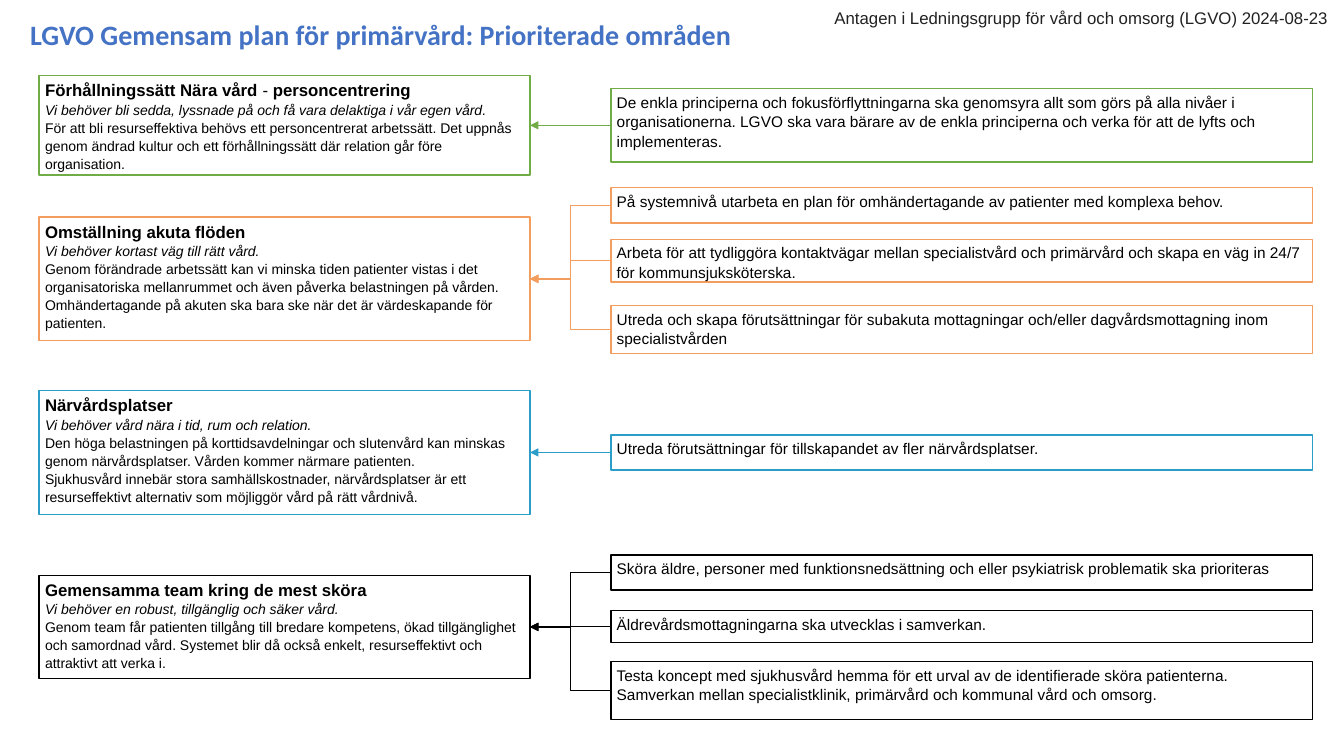
from lxml.etree import SubElement
from pptx import Presentation
from pptx.dml.color import RGBColor
from pptx.enum.shapes import MSO_CONNECTOR, MSO_SHAPE
from pptx.enum.text import MSO_ANCHOR, PP_ALIGN
from pptx.oxml.ns import qn
from pptx.util import Pt

HUES = {
    "title": "4472C4", "note": "212121", "text": "000000", "back": "FFFFFF",
    "green": "70AD47", "orange": "F39D5F", "blue": "2A9EC8", "black": "000000",
}
CARD_X, CARD_W = 28, 350.6
ITEM_X, ITEM_W = 436.3, 501.2

deck = Presentation()
deck.slide_width, deck.slide_height = Pt(960), Pt(540)
slide = deck.slides.add_slide(deck.slide_layouts[6])


def write(frame, lines, size=11, font="Arial", hue="text", space=1.07,
          inset=(7.2, 3.6), anchor=MSO_ANCHOR.TOP):
    frame.word_wrap = True
    frame.vertical_anchor = anchor
    frame.margin_left = frame.margin_right = Pt(inset[0])
    frame.margin_top = frame.margin_bottom = Pt(inset[1])
    for n, runs in enumerate(lines):
        para = frame.paragraphs[0] if n == 0 else frame.add_paragraph()
        para.alignment = PP_ALIGN.LEFT
        para.line_spacing = space
        for text, style in runs:
            run = para.add_run()
            run.text = text
            run.font.name = font
            run.font.size = Pt(12 if "h" in style else size)
            run.font.bold = "b" in style
            run.font.italic = "i" in style
            run.font.color.rgb = RGBColor.from_string(HUES[hue])


def frame_box(x, y, wide, high, hue, lines, size):
    box = slide.shapes.add_shape(
        MSO_SHAPE.RECTANGLE, Pt(x), Pt(y), Pt(wide), Pt(high))
    box.shadow.inherit = False
    box.fill.solid()
    box.fill.fore_color.rgb = RGBColor.from_string(HUES["back"])
    box.line.color.rgb = RGBColor.from_string(HUES[hue])
    box.line.width = Pt(1)
    write(box.text_frame, lines, size=size, inset=(4.2, 2.1))
    return box


title = slide.shapes.add_textbox(Pt(14.4), Pt(7.9), Pt(648.7), Pt(36.7))
write(title.text_frame,
      [[("LGVO Gemensam plan för primärvård: Prioriterade områden", "b")]],
      size=20, font="Calibri", hue="title", space=0.9, anchor=MSO_ANCHOR.MIDDLE)

note = slide.shapes.add_textbox(Pt(589), Pt(2.2), Pt(371), Pt(21.6))
write(note.text_frame,
      [[("Antagen i Ledningsgrupp för vård och omsorg (LGVO) 2024-08-23", "")]],
      size=12, hue="note", space=1.0)

AREAS = [
    ("green", 1, MSO_CONNECTOR.ELBOW, 54, 71.1,
     [[("Förhållningssätt Nära vård", "hb"), (" - ", "h"), ("personcentrering", "hb")],
      [("Vi behöver bli sedda, lyssnade på och få vara delaktiga i vår egen vård", "i"),
       (".", "")],
      [("För att bli resurseffektiva behövs ett personcentrerat arbetssätt. Det uppnås "
        "genom ändrad kultur och ett förhållningssätt där relation går före "
        "organisation.", "")]],
     [(63.2, 52.6,
       ["De enkla principerna och fokusförflyttningarna ska genomsyra allt som görs på "
        "alla nivåer i organisationerna. LGVO ska vara bärare av de enkla principerna "
        "och verka för att de lyfts och implementeras."])]),
    ("orange", 1, MSO_CONNECTOR.ELBOW, 155, 88.4,
     [[("Omställning akuta flöden", "hb")],
      [("Vi behöver kortast väg till rätt vård.", "i")],
      [("Genom förändrade arbetssätt kan vi minska tiden patienter vistas i det "
        "organisatoriska mellanrummet och även påverka belastningen på vården. "
        "Omhändertagande på akuten ska bara ske när det är värdeskapande för "
        "patienten.", "")]],
     [(134, 25.2,
       ["På systemnivå utarbeta en plan för omhändertagande av patienter med komplexa "
        "behov."]),
      (171, 30.4,
       ["Arbeta för att tydliggöra kontaktvägar mellan specialistvård och primärvård "
        "och skapa en väg in 24/7 för kommunsjuksköterska."]),
      (218.2, 34.4,
       ["Utreda och skapa förutsättningar för subakuta mottagningar och/eller "
        "dagvårdsmottagning inom specialistvården"])]),
    ("blue", 0.5, MSO_CONNECTOR.STRAIGHT, 279, 88.4,
     [[("Närvårdsplatser", "hb")],
      [("Vi behöver vård nära i tid, rum och relation.", "i")],
      [("Den höga belastningen på korttidsavdelningar och slutenvård kan minskas genom "
        "närvårdsplatser. Vården kommer närmare patienten.", "")],
      [("Sjukhusvård innebär stora samhällskostnader, närvårdsplatser är ett "
        "resurseffektivt alternativ som möjliggör vård på rätt vårdnivå.", "")]],
     [(310.7, 25,
       ["Utreda förutsättningar för tillskapandet av fler närvårdsplatser."])]),
    ("black", 0.5, MSO_CONNECTOR.ELBOW, 411, 73.6,
     [[("Gemensamma team kring de mest sköra", "hb")],
      [("Vi behöver en robust, tillgänglig och säker vård.", "i")],
      [("Genom team får patienten tillgång till bredare kompetens, ökad tillgänglighet "
        "och samordnad vård. Systemet blir då också enkelt, resurseffektivt och "
        "attraktivt att verka i.", "")]],
     [(396.5, 25,
       ["Sköra äldre, personer med funktionsnedsättning och eller psykiatrisk "
        "problematik ska prioriteras"]),
      (436, 23, ["Äldrevårdsmottagningarna ska utvecklas i samverkan."]),
      (472.5, 41.4,
       ["Testa koncept med sjukhusvård hemma för ett urval av de identifierade sköra "
        "patienterna.",
        "Samverkan mellan specialistklinik, primärvård och kommunal vård och "
        "omsorg."])]),
]

for hue, width, kind, top, high, lines, items in AREAS:
    card = frame_box(CARD_X, top, CARD_W, high, hue, lines, 10)
    for y, tall, texts in items:
        item = frame_box(ITEM_X, y, ITEM_W, tall, hue,
                         [[(text, "")] for text in texts], 11)
        link = slide.shapes.add_connector(kind, 0, 0, 0, 0)
        link.begin_connect(item, 1)
        link.end_connect(card, 3)
        link.line.color.rgb = RGBColor.from_string(HUES[hue])
        link.line.width = Pt(width)
        SubElement(link.line._get_or_add_ln(), qn("a:tailEnd"), type="triangle")
        SubElement(link._element.spPr, qn("a:effectLst"))

deck.save("out.pptx")
